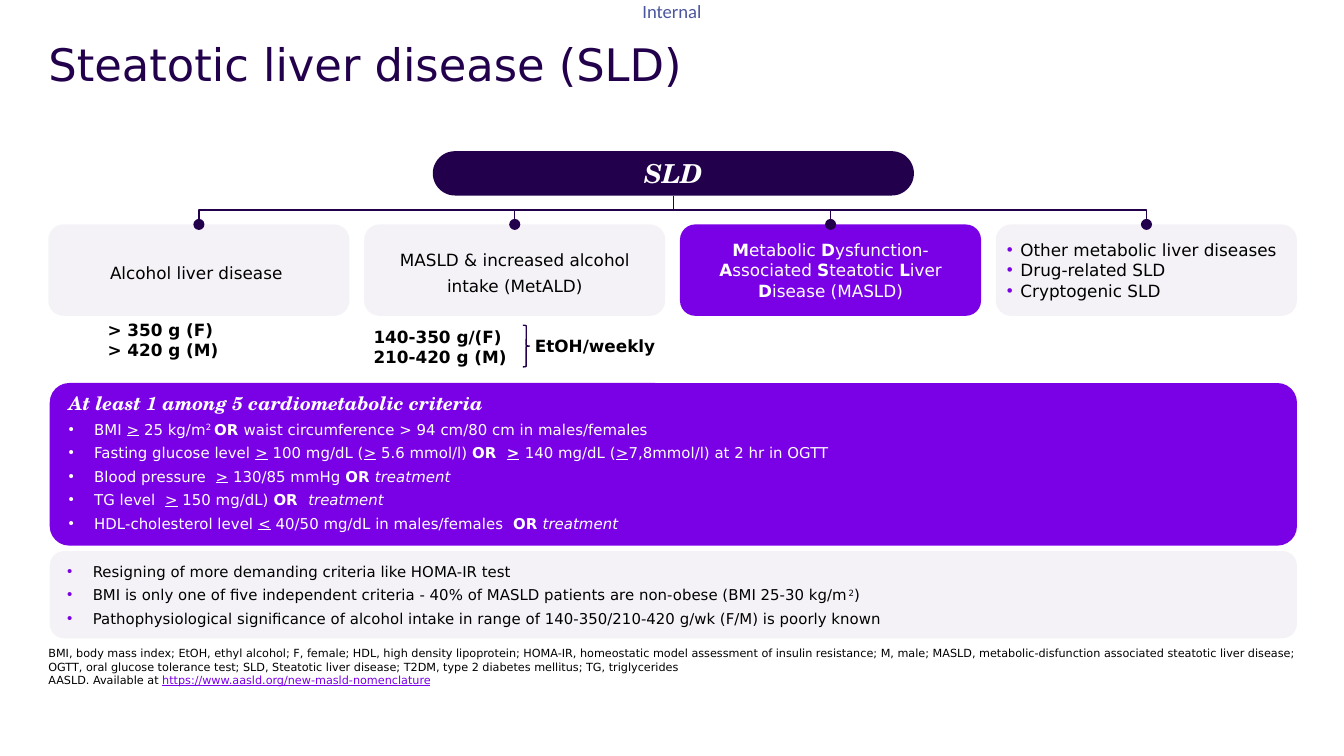
from dataclasses import dataclass, field
from typing import Optional, Union

from lxml import etree
from pptx import Presentation
from pptx.dml.color import RGBColor
from pptx.enum.shapes import MSO_CONNECTOR, MSO_SHAPE
from pptx.enum.text import MSO_ANCHOR, MSO_AUTO_SIZE, PP_ALIGN
from pptx.oxml.ns import qn
from pptx.util import Emu, Inches, Pt

ROUNDED, BRACE = MSO_SHAPE.ROUNDED_RECTANGLE, MSO_SHAPE.RIGHT_BRACE
STRAIGHT, ELBOW = MSO_CONNECTOR.STRAIGHT, MSO_CONNECTOR.ELBOW
TOP, MIDDLE, BOTTOM = MSO_ANCHOR.TOP, MSO_ANCHOR.MIDDLE, MSO_ANCHOR.BOTTOM
LEFT, CENTER = PP_ALIGN.LEFT, PP_ALIGN.CENTER
NO_FIT = MSO_AUTO_SIZE.NONE

SLIDE_WIDTH, SLIDE_HEIGHT = Inches(10), Inches(5.625)
UNIT = SLIDE_WIDTH / 100
SANS, SERIF = "DejaVu Sans", "TeX Gyre Schola"
INK, VIOLET, PALE = "23004C", "7A00E6", "F4F2F6"
WHITE, BLACK, SLATE = "FFFFFF", "000000", "4A569E"
CARD_LEFT, CARD_STEP, CARD_WIDTH = 3.6, 23.5, 22.4
CARD_TOP, CARD_HEIGHT = 16.7, 6.8
ROOT_BOTTOM, RAIL_TOP = 14.55, 15.6
STYLES = {
    "b": {"bold": True},
    "i": {"italic": True},
    "u": {"underline": True},
}


@dataclass
class Paragraph:
    runs: list
    size: float = 9
    color: str = BLACK
    font: str = SANS
    align: PP_ALIGN = LEFT
    bullet: Optional[str] = None
    indent: float = 1.9
    spacing: Union[float, Pt, None] = None
    after: float = 0


@dataclass
class Box:
    left: float
    top: float
    width: float
    height: float
    paragraphs: list = field(default_factory=list)
    fill: Optional[str] = None
    rounding: float = 0.1667
    anchor: MSO_ANCHOR = MIDDLE
    insets: tuple = (1, 0.5)
    wrap: bool = True


def units(value: float) -> Emu:
    return Emu(round(value * UNIT))


def color(value: str) -> RGBColor:
    return RGBColor.from_string(value)


def set_all(target, values: dict) -> None:
    for name, value in values.items():
        setattr(target, name, value)


def area(box: Box) -> list:
    return [units(value) for value in (box.left, box.top, box.width, box.height)]


def add_bullet(paragraph, bullet: Optional[str], indent: float) -> None:
    properties = paragraph._p.get_or_add_pPr()
    shift = units(indent) if bullet else 0
    properties.set("marL", str(shift))
    properties.set("indent", str(-shift))
    if not bullet:
        etree.SubElement(properties, qn("a:buNone"))
        return
    tint = etree.SubElement(properties, qn("a:buClr"))
    etree.SubElement(tint, qn("a:srgbClr")).set("val", bullet)
    etree.SubElement(properties, qn("a:buFont")).set("typeface", "Arial")
    etree.SubElement(properties, qn("a:buChar")).set("char", "•")


def write(shape, box: Box) -> None:
    frame = shape.text_frame
    side, edge = map(units, box.insets)
    set_all(frame, {"auto_size": NO_FIT, "word_wrap": box.wrap, "vertical_anchor": box.anchor,
                    "margin_left": side, "margin_right": side,
                    "margin_top": edge, "margin_bottom": edge})
    for index, content in enumerate(box.paragraphs):
        paragraph = frame.add_paragraph() if index else frame.paragraphs[0]
        add_bullet(paragraph, content.bullet, content.indent)
        set_all(paragraph, {"alignment": content.align, "line_spacing": content.spacing,
                            "space_before": Pt(0), "space_after": Pt(content.after)})
        for part in content.runs:
            text, style, *tint = (part, "") if isinstance(part, str) else part
            run = paragraph.add_run()
            run.text = text
            set_all(run.font, {"name": content.font, "size": Pt(content.size)})
            run.font.color.rgb = color(tint[0] if tint else content.color)
            for letter in style:
                if letter == "^":
                    run._r.get_or_add_rPr().set("baseline", "30000")
                else:
                    set_all(run.font, STYLES[letter])


def add_panel(slide, box: Box):
    shape = slide.shapes.add_shape(ROUNDED, *area(box))
    shape.adjustments[0] = box.rounding
    shape.shadow.inherit = False
    shape.fill.solid()
    shape.fill.fore_color.rgb = color(box.fill)
    shape.line.fill.background()
    write(shape, box)
    return shape


def add_label(slide, box: Box) -> None:
    write(slide.shapes.add_textbox(*area(box)), box)


def fill_placeholder(shape, box: Box) -> None:
    set_all(shape, dict(zip(("left", "top", "width", "height"), area(box))))
    write(shape, box)


def add_brace(slide, box: Box) -> None:
    brace = slide.shapes.add_shape(BRACE, *area(box))
    brace.shadow.inherit = False
    brace.fill.background()
    brace.line.color.rgb = color(INK)
    brace.line.width = Pt(0.75)


def style_connector(connector) -> None:
    connector.line.color.rgb = color(INK)
    connector.line.width = Pt(0.75)
    etree.SubElement(connector.line._get_or_add_ln(), qn("a:tailEnd")).set("type", "oval")
    etree.SubElement(connector._element.spPr, qn("a:effectLst"))


def add_branch(slide, root_x: float, card_x: float) -> None:
    run, drop = abs(card_x - root_x), CARD_TOP - ROOT_BOTTOM
    left = (root_x + card_x - drop) / 2
    top = (ROOT_BOTTOM + CARD_TOP - run) / 2
    branch = slide.shapes.add_connector(
        ELBOW, units(left), units(top), units(left + drop), units(top + run))
    transform = branch._element.spPr.find(qn("a:xfrm"))
    transform.set("rot", "5400000" if card_x < root_x else "16200000")
    if card_x > root_x:
        transform.set("flipH", "1")
    style_connector(branch)


def add_drop(slide, card, card_x: float) -> None:
    drop = slide.shapes.add_connector(
        STRAIGHT, units(card_x), units(RAIL_TOP), units(card_x), units(CARD_TOP))
    drop.end_connect(card, 0)
    style_connector(drop)


def criterion(*runs) -> Paragraph:
    return Paragraph(list(runs), 8, WHITE, bullet=WHITE, after=3)


def remark(*runs) -> Paragraph:
    return Paragraph(list(runs), 8, bullet=VIOLET, after=3)


def strong(*lines: str) -> list:
    return [Paragraph([(line, "b")]) for line in lines]


AT_LEAST, OR, TREATMENT = (">", "u"), ("OR ", "b"), ("treatment", "i")
CRITERIA = [
    Paragraph([("At least 1 among 5 cardiometabolic criteria", "bi")], 10, WHITE, SERIF,
              spacing=0.8, after=3),
    criterion("BMI ", AT_LEAST, " 25 kg/m", ("2 ", "^"), OR,
              "waist circumference > 94 cm/80 cm in males/females"),
    criterion("Fasting glucose level ", AT_LEAST, " 100 mg/dL (", AT_LEAST, " 5.6 mmol/l) ",
              ("OR  ", "b"), (">", "bu"), (" ", "b"), "140 mg/dL (", AT_LEAST,
              "7,8mmol/l) at 2 hr in OGTT"),
    criterion("Blood pressure  ", AT_LEAST, " 130/85 mmHg ", OR, TREATMENT),
    criterion("TG level  ", AT_LEAST, " 150 mg/dL) ", ("OR  ", "b"), TREATMENT),
    criterion("HDL-cholesterol level ", ("<", "u"), " 40/50 mg/dL in males/females  ", OR, TREATMENT),
]
REMARKS = [
    remark("Resigning of more demanding criteria like HOMA-IR test"),
    remark("BMI is only one of five independent criteria - 40% of MASLD patients are non-obese "
           "(BMI 25-30 kg/m", ("2", "^"), ")"),
    remark("Pathophysiological significance of alcohol intake in range of 140-350/210-420 g/wk "
           "(F/M) is poorly known"),
]
MASLD = [("M", "b"), "etabolic ", ("D", "b"), "ysfunction-", ("A", "b"), "ssociated ",
         ("S", "b"), "teatotic ", ("L", "b"), "iver ", ("D", "b"), "isease (MASLD)"]
OTHERS = ["Other metabolic liver diseases", "Drug-related SLD", "Cryptogenic SLD"]
CARDS = [
    (PALE, (1, 0.5), [Paragraph(["Alcohol liver disease "], align=CENTER, spacing=Pt(13.6))]),
    (PALE, (1, 0.5), [Paragraph(["MASLD & increased alcohol intake (MetALD)"], align=CENTER,
                                spacing=Pt(13.8))]),
    (VIOLET, (1, 0.5), [Paragraph(MASLD, color=WHITE, align=CENTER)]),
    (PALE, (0.5, 0.5), [Paragraph([text], bullet=VIOLET, indent=1) for text in OTHERS]),
]
FOOTNOTES = [
    Paragraph(["BMI, body mass index; EtOH, ethyl alcohol; F, female; HDL, high density lipoprotein; "
               "HOMA-IR, homeostatic model assessment of insulin resistance; M, male; MASLD, "
               "metabolic-disfunction associated steatotic liver disease; OGTT, oral glucose "
               "tolerance test; SLD, Steatotic liver disease; T2DM, type 2 diabetes mellitus; "
               "TG, triglycerides"], 6),
    Paragraph(["AASLD. Available at ",
               ("https://www.aasld.org/new-masld-nomenclature", "u", VIOLET)], 6),
]
TITLE = [Paragraph(["Steatotic liver disease (SLD)"], 24, INK, spacing=0.9)]
LABELS = [
    Box(47.8, 0, 4.7, 1.7, [Paragraph(["Internal"], 10, SLATE, "Calibri")]),
    Box(27.8, 24.3, 10.4, 3, strong("140-350 g/(F)", "210-420 g (M)")),
    Box(39.8, 25, 9.5, 1.5, strong("EtOH/weekly")),
    Box(8, 23.8, 8.5, 3, strong("> 350 g (F)", "> 420 g (M)")),
]
PANELS = [
    Box(3.7, 28.5, 92.8, 12.1, CRITERIA, VIOLET, 0.12),
    Box(3.7, 41, 92.8, 6.5, REMARKS, PALE),
    Box(32.2, 11.25, 35.8, 3.3, [Paragraph([("SLD", "bi")], 14, WHITE, SERIF, CENTER)], INK, 0.5,
        insets=(0.5, 0.5)),
]


def main() -> None:
    presentation = Presentation()
    set_all(presentation, {"slide_width": SLIDE_WIDTH, "slide_height": SLIDE_HEIGHT})
    slide = presentation.slides.add_slide(presentation.slide_layouts[1])
    fill_placeholder(slide.shapes.title, Box(3.6, 3.2, 92.8, 7.9, TITLE, anchor=TOP, insets=(0, 0)))
    fill_placeholder(slide.placeholders[1],
                     Box(3.6, 48.1, 92.9, 3, FOOTNOTES, anchor=BOTTOM, insets=(0, 0)))
    for label in LABELS:
        set_all(label, {"anchor": TOP, "insets": (0, 0), "wrap": False})
        add_label(slide, label)
    add_brace(slide, Box(38.9, 24.2, 0.5, 3.1))
    for panel in PANELS:
        add_panel(slide, panel)

    cards, centers = [], []
    for column, (fill, insets, paragraphs) in enumerate(CARDS):
        left = CARD_LEFT + column * CARD_STEP
        box = Box(left, CARD_TOP, CARD_WIDTH, CARD_HEIGHT, paragraphs, fill, insets=insets)
        cards.append(add_panel(slide, box))
        centers.append(left + CARD_WIDTH / 2)
    root_x = PANELS[-1].left + PANELS[-1].width / 2
    for column in (0, 3):
        add_branch(slide, root_x, centers[column])
    for column in (1, 2):
        add_drop(slide, cards[column], centers[column])
    presentation.save("out.pptx")


if __name__ == "__main__":
    main()
